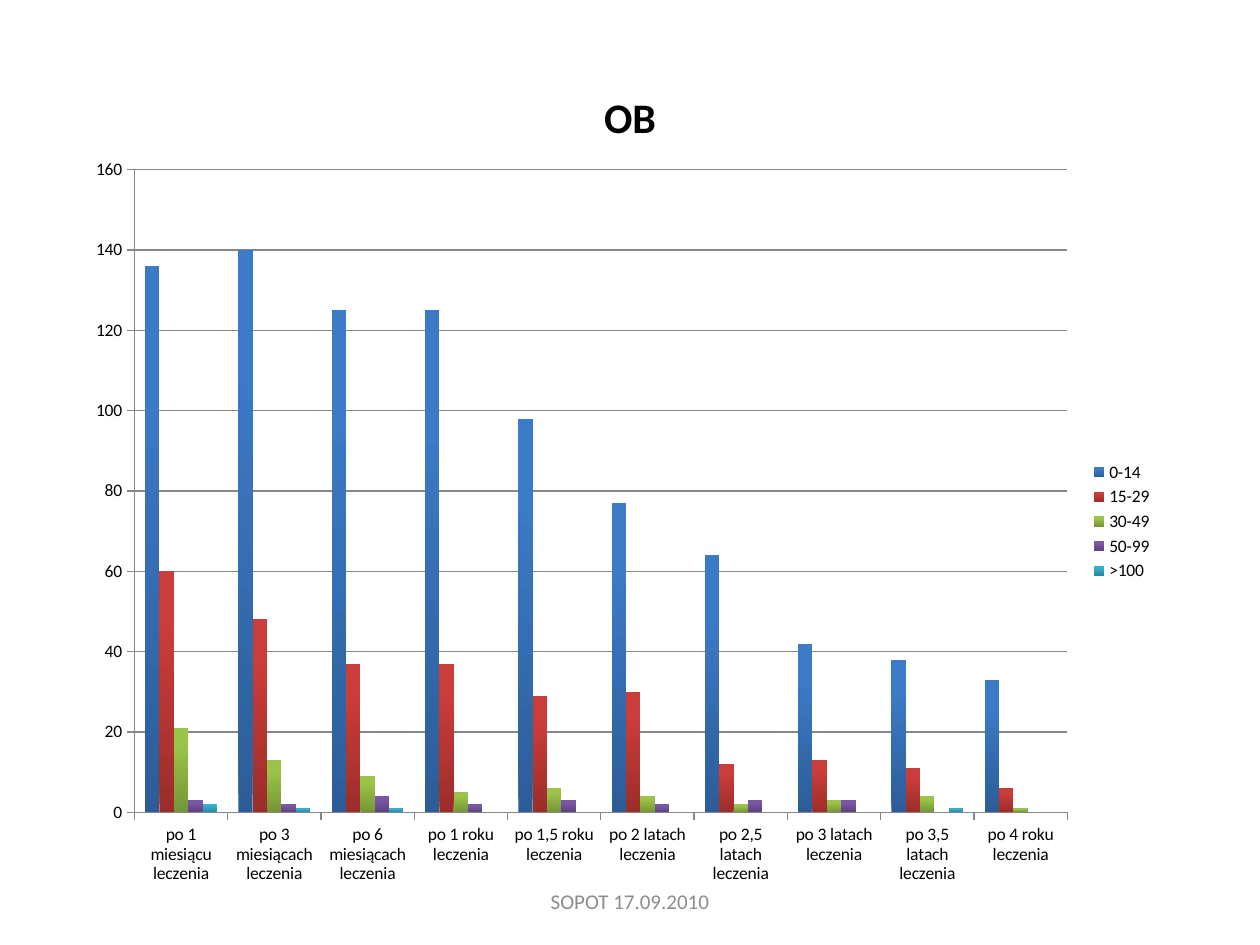
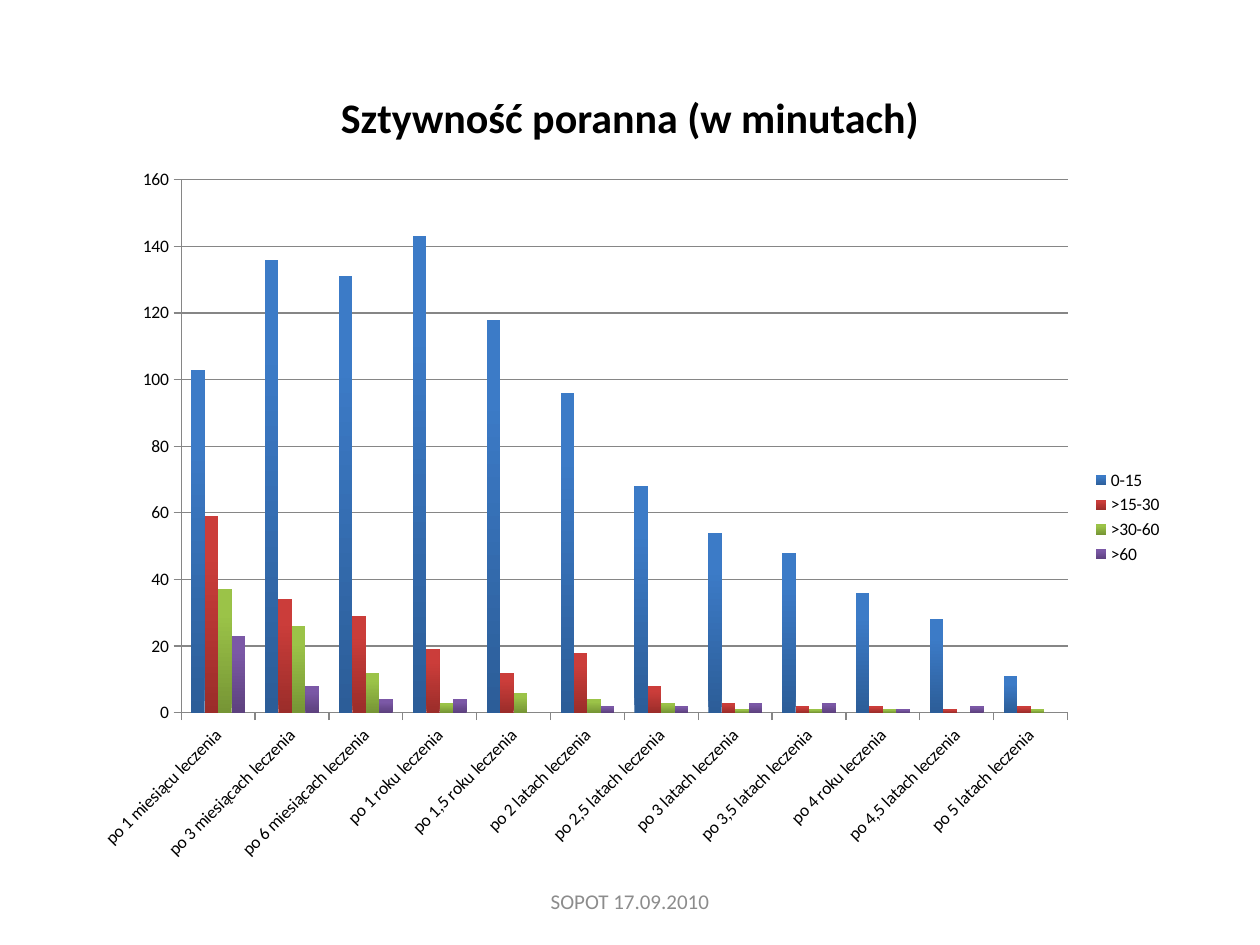
from lxml import etree
from pptx import Presentation, util as u
from pptx.chart.data import CategoryChartData
from pptx.dml.color import RGBColor
from pptx.enum import chart as charts, text

FONT = "Calibri"
BLACK, FOOTER_GREY, AXIS_GREY = "000000", "8C8C8C", "868686"
BAR_GRADIENTS = [
    ("2C5D98", "3C7BC7"),
    ("9B2D2A", "CB3D3A"),
    ("769535", "9BC348"),
    ("5D417E", "7B58A6"),
    ("2787A0", "36B1D2"),
]
FOOTER = "SOPOT 17.09.2010"
PERIODS = [
    "1 miesiącu", "3 miesiącach", "6 miesiącach", "1 roku", "1,5 roku", "2 latach",
    "2,5 latach", "3 latach", "3,5 latach", "4 roku", "4,5 latach", "5 latach",
]
ESR_COUNTS = {
    "0-14": [136, 140, 125, 125, 98, 77, 64, 42, 38, 33],
    "15-29": [60, 48, 37, 37, 29, 30, 12, 13, 11, 6],
    "30-49": [21, 13, 9, 5, 6, 4, 2, 3, 4, 1],
    "50-99": [3, 2, 4, 2, 3, 2, 3, 3, None, None],
    ">100": [2, 1, 1, None, None, None, None, None, 1, None],
}
STIFFNESS_COUNTS = {
    "0-15": [103, 136, 131, 143, 118, 96, 68, 54, 48, 36, 28, 11],
    ">15-30": [59, 34, 29, 19, 12, 18, 8, 3, 2, 2, 1, 2],
    ">30-60": [37, 26, 12, 3, 6, 4, 3, 1, 1, 1, None, 1],
    ">60": [23, 8, 4, 4, None, 2, 2, 3, 3, 1, 2, None],
}


def color(value):
    return RGBColor.from_string(value)


class Deck:
    COLUMNS, ROWS = 100, 75

    def __init__(self):
        self.presentation = Presentation()
        self.presentation.slide_width = u.Inches(10)
        self.presentation.slide_height = u.Inches(7.5)
        self.slide = None

    def box(self, left, top, width, height):
        column = self.presentation.slide_width / self.COLUMNS
        row = self.presentation.slide_height / self.ROWS
        return [round(n) for n in (left * column, top * row, width * column, height * row)]

    def new_slide(self, heading):
        self.slide = self.presentation.slides.add_slide(self.presentation.slide_layouts[6])
        self.label(heading, (5, 3, 90, 12.5), 24, BLACK, bold=True)

    def label(self, words, place, size, ink, bold=False):
        frame = self.slide.shapes.add_textbox(*self.box(*place)).text_frame
        frame.word_wrap = True
        frame.vertical_anchor = text.MSO_ANCHOR.MIDDLE
        frame.text = words
        paragraph = frame.paragraphs[0]
        paragraph.alignment = text.PP_ALIGN.CENTER
        font = paragraph.runs[0].font
        font.name, font.size, font.bold = FONT, u.Pt(size), bold
        font.color.rgb = color(ink)

    def footer(self):
        self.label(FOOTER, (34.15, 69.5, 31.7, 4), 12, FOOTER_GREY)

    def line(self, line_format):
        line_format.color.rgb = color(AXIS_GREY)
        line_format.width = u.Pt(0.75)

    def bars(self, counts, place, plot_shares, slanted=False):
        data = CategoryChartData()
        periods = PERIODS[:len(next(iter(counts.values())))]
        data.categories = [f"po {period} leczenia" for period in periods]
        for group, patients in counts.items():
            data.add_series(group, patients)
        chart = self.slide.shapes.add_chart(
            charts.XL_CHART_TYPE.COLUMN_CLUSTERED, *self.box(*place), data).chart
        chart.has_title = False
        chart.font.name, chart.font.size = FONT, u.Pt(10)
        chart.font.color.rgb = color(BLACK)
        chart.has_legend = True
        chart.legend.position = charts.XL_LEGEND_POSITION.RIGHT
        chart.legend.include_in_layout = False
        for axis in (chart.category_axis, chart.value_axis):
            axis.major_tick_mark = charts.XL_TICK_MARK.OUTSIDE
            self.line(axis.format.line)
        chart.value_axis.maximum_scale = 160
        chart.value_axis.minimum_scale = 0
        chart.value_axis.major_unit = 20
        self.line(chart.value_axis.major_gridlines.format.line)
        if slanted:
            self.slant(chart.category_axis)
        self.place_plot(chart, plot_shares)
        plot = chart.plots[0]
        plot.vary_by_categories = False
        plot.gap_width = 150
        for series, (dark, light) in zip(plot.series, BAR_GRADIENTS):
            self.shade(series.format.fill, dark, light)

    def place_plot(self, chart, shares):
        area = next(e for e in chart._chartSpace.iter() if etree.QName(e).localname == "plotArea")
        prefix = f"{{{etree.QName(area).namespace}}}"
        for old in area.findall(prefix + "layout"):
            area.remove(old)
        layout = etree.Element(prefix + "layout")
        area.insert(0, layout)
        manual = etree.SubElement(layout, prefix + "manualLayout")
        settings = [("layoutTarget", "inner"), ("xMode", "edge"), ("yMode", "edge")]
        for tag, value in settings + list(zip("xywh", shares)):
            etree.SubElement(manual, prefix + tag).set("val", str(value))

    def slant(self, axis):
        font = axis.tick_labels.font
        font.name, font.size = FONT, u.Pt(10)
        font.color.rgb = color(BLACK)
        body = next(e for e in axis._element.iter() if etree.QName(e).localname == "bodyPr")
        body.set("rot", "-2700000")
        body.set("vert", "horz")

    def shade(self, fill, dark, light):
        fill.gradient()
        fill.gradient_angle = 90
        for stop, tone, position in zip(fill.gradient_stops, (dark, light), (0, 0.8)):
            stop.color.rgb = color(tone)
            stop.position = position


def main():
    deck = Deck()
    deck.new_slide("OB")
    deck.bars(ESR_COUNTS, (5.9, 11.5, 86.6, 59.8), (0.055, 0.033, 0.855, 0.853))
    deck.footer()
    deck.new_slide("Sztywność poranna (w minutach)")
    deck.bars(STIFFNESS_COUNTS, (5.9, 12.3, 87.4, 57.5), (0.097, 0.034, 0.805, 0.736), slanted=True)
    deck.footer()
    deck.presentation.save("out.pptx")


if __name__ == "__main__":
    main()
